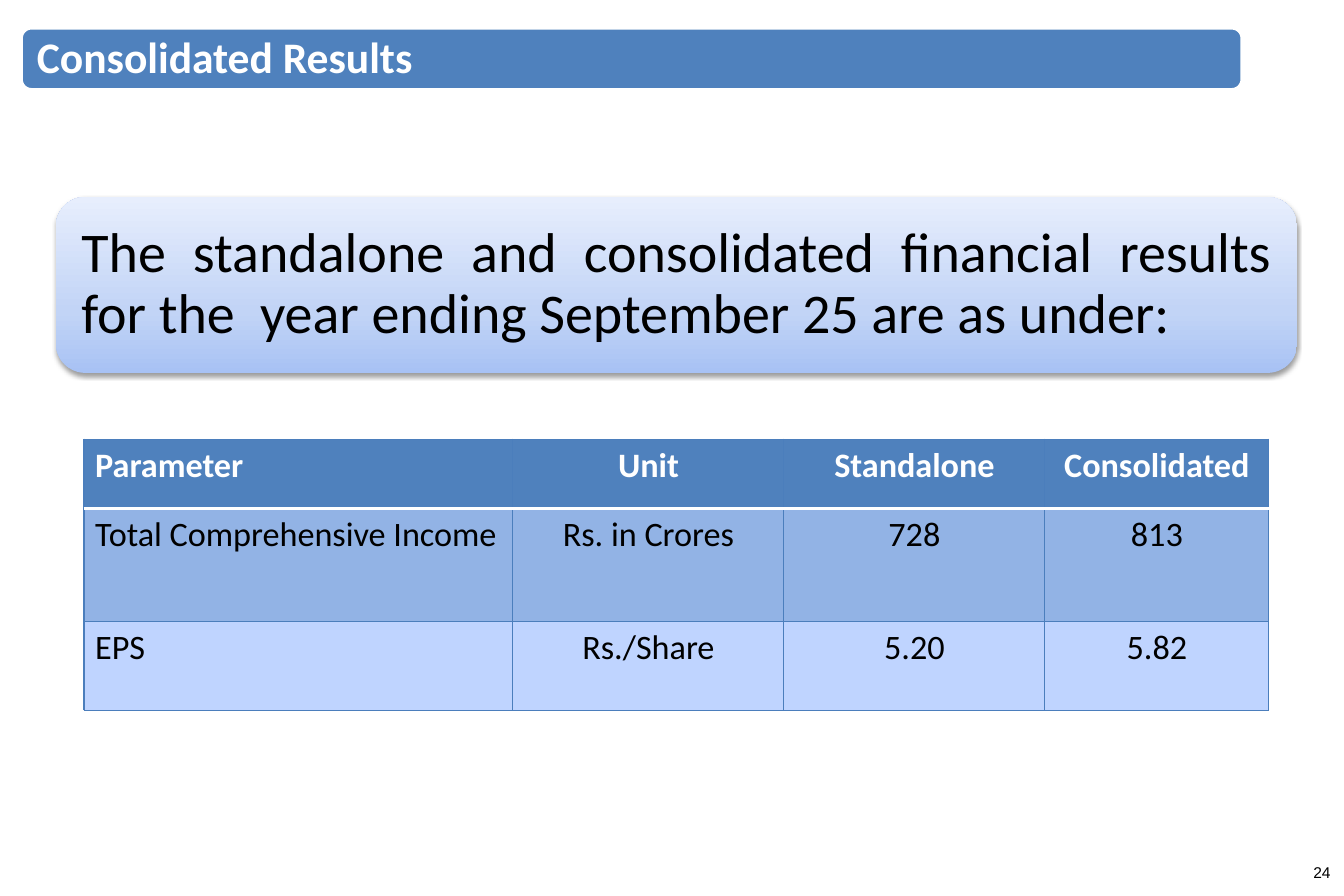
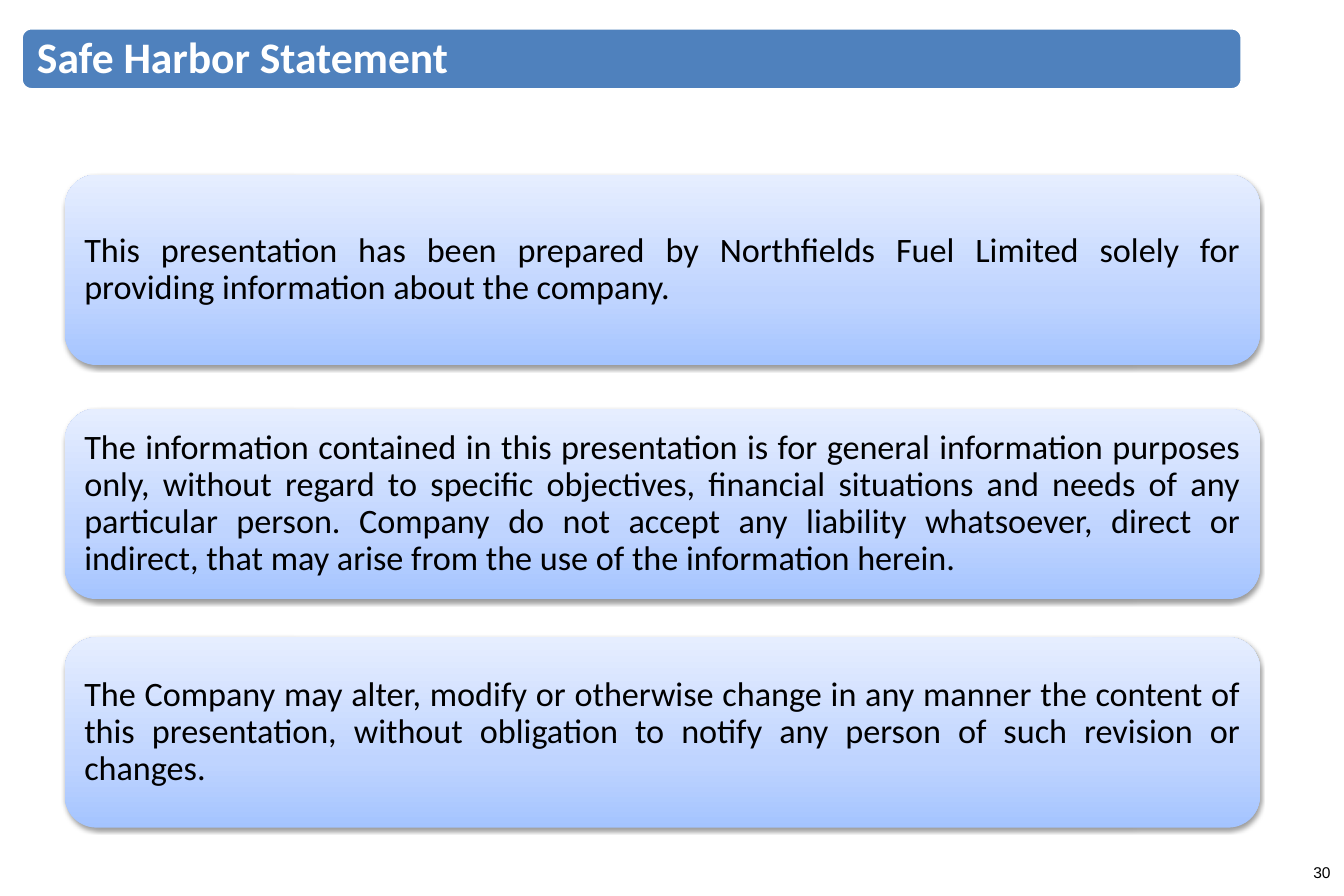
from lxml.etree import SubElement
from pptx import Presentation
from pptx.dml.color import RGBColor
from pptx.enum.shapes import MSO_SHAPE
from pptx.enum.text import MSO_ANCHOR, MSO_AUTO_SIZE, PP_ALIGN
from pptx.oxml.ns import qn
from pptx.util import Inches, Pt

BLUE = RGBColor(0x4F, 0x81, 0xBD)
EDGE = RGBColor(0x4B, 0x7E, 0xBC)
DARK = RGBColor(0x92, 0xB3, 0xE5)
PALE = RGBColor(0xBF, 0xD4, 0xFF)
WHITE = RGBColor(0xFF, 0xFF, 0xFF)
BLACK = RGBColor(0x00, 0x00, 0x00)
SOFT = [(0, RGBColor(0xA8, 0xC2, 0xF4)), (35, RGBColor(0xC2, 0xD4, 0xF6)),
        (100, RGBColor(0xE7, 0xEE, 0xFD))]
VIVID = [(0, RGBColor(0xA4, 0xC4, 0xFF)), (35, PALE),
         (100, RGBColor(0xE6, 0xEE, 0xFF))]


def write(frame, text, size=22, color=BLACK, bold=False, font="Calibri",
          align=PP_ALIGN.LEFT, space=None):
    """Put one formatted paragraph into a text frame."""
    frame.word_wrap = True
    par = frame.paragraphs[0]
    par.text = text
    par.alignment = align
    par.line_spacing = space
    face = par.font
    face.name, face.size, face.bold = font, Pt(size), bold
    face.color.rgb = color


def inset(frame, side, ends):
    """Set the margins of a text frame and centre it vertically."""
    frame.margin_left = frame.margin_right = Inches(side)
    frame.margin_top = frame.margin_bottom = Inches(ends)
    frame.vertical_anchor = MSO_ANCHOR.MIDDLE


def tint(node, color, alpha=None):
    """Add an RGB colour, perhaps translucent, to an XML node."""
    rgb = SubElement(node, qn("a:srgbClr"), val=str(color))
    if alpha is not None:
        SubElement(rgb, qn("a:alpha"), val=str(alpha * 1000))


def border(cell, sides):
    """Draw cell borders from (side, colour, points) rows."""
    props = cell._tc.get_or_add_tcPr()
    for spot, (side, color, width) in enumerate(sides):
        line = SubElement(props, qn("a:ln" + side), w=str(Pt(width)))
        tint(SubElement(line, qn("a:solidFill")), color)
        props.insert(spot, line)


class Deck:
    """Hold the shared style and the current slide."""

    def __init__(self):
        """Start an empty deck."""
        self.prs = Presentation()
        self.prs.slide_width, self.prs.slide_height = Inches(12), Inches(8)

    def round(self, left, top, width, height):
        """Add a rounded rectangle without a shadow."""
        shape = self.slide.shapes.add_shape(
            MSO_SHAPE.ROUNDED_RECTANGLE, Inches(left), Inches(top),
            Inches(width), Inches(height))
        shape.shadow.inherit = False
        return shape

    def page(self, title, number):
        """Add a slide with its title band and page number."""
        self.slide = self.prs.slides.add_slide(self.prs.slide_layouts[5])
        band = self.round(0.19, 0.25, 10.9, 0.55)
        band.fill.solid()
        band.fill.fore_color.rgb = BLUE
        band.line.color.rgb = WHITE
        band.line.width = Pt(2)
        head = self.slide.shapes.title
        head._element.addprevious(band._element)
        head.left, head.top = Inches(0.21), Inches(0.28)
        head.width, head.height = Inches(10.84), Inches(0.5)
        head.text_frame.auto_size = MSO_AUTO_SIZE.NONE
        inset(head.text_frame, 0.12, 0.12)
        write(head.text_frame, title, size=28, color=WHITE, bold=True, space=0.9)
        foot = self.slide.shapes.add_textbox(
            Inches(9.2), Inches(7.57), Inches(2.8), Inches(0.43))
        inset(foot.text_frame, 0.12, 0.06)
        write(foot.text_frame, number, size=10, font="Arial",
              align=PP_ALIGN.RIGHT)

    def panel(self, text, left, top, width, height, stops, pad, size=22):
        """Add a shaded panel of justified text."""
        shape = self.round(left, top, width, height)
        shape.fill.gradient()
        shape.fill.gradient_angle = 90
        shape.line.fill.background()
        props = shape._element.spPr
        ramp = props.find(".//" + qn("a:gsLst"))
        for stop in list(ramp):
            ramp.remove(stop)
        for spot, color in stops:
            tint(SubElement(ramp, qn("a:gs"), pos=str(spot * 1000)), color)
        shade = SubElement(
            props.find(qn("a:effectLst")), qn("a:outerShdw"),
            blurRad=str(Pt(3.1)), dist=str(Pt(1.6)), dir="5400000",
            rotWithShape="0")
        tint(shade, BLACK, 38)
        inset(shape.text_frame, pad, pad)
        write(shape.text_frame, text, size=size, align=PP_ALIGN.JUSTIFY,
              space=0.9)

    def table(self, rows, left, top, widths, heights):
        """Add a ruled table with a header row."""
        grid = self.slide.shapes.add_table(
            len(rows), len(widths), Inches(left), Inches(top),
            Inches(sum(widths)), Inches(sum(heights))).table
        for col, width in zip(grid.columns, widths):
            col.width = Inches(width)
        for row, height in zip(grid.rows, heights):
            row.height = Inches(height)
        thin, thick = (EDGE, 0.75), (WHITE, 2)
        for r, (row, fill) in enumerate(zip(rows, (BLUE, DARK, PALE))):
            for c, text in enumerate(row):
                cell = grid.cell(r, c)
                cell.fill.solid()
                cell.fill.fore_color.rgb = fill
                border(cell, [("L", *thin), ("R", *thin),
                              ("T", *(thick if r == 1 else thin)),
                              ("B", *(thick if r == 0 else thin))])
                write(cell.text_frame, text, bold=r == 0,
                      color=BLACK if r else WHITE,
                      align=PP_ALIGN.CENTER if c else PP_ALIGN.LEFT)


def main():
    """Build both slides and save them."""
    deck = Deck()
    deck.page("Consolidated Results", "24")
    deck.panel("The standalone and consolidated financial results for the  "
               "year ending September 25 are as under:",
               0.5, 1.76, 11.08, 1.57, SOFT, 0.15, size=36)
    deck.table([("Parameter", "Unit", "Standalone", "Consolidated"),
                ("Total Comprehensive Income", "Rs. in Crores", "728", "813"),
                ("EPS", "Rs./Share", "5.20", "5.82")],
               0.75, 3.92, (3.83, 2.42, 2.33, 2), (0.62, 1.01, 0.79))

    deck.page("Safe Harbor Statement", "30")
    notes = [
        (1.56, "This presentation has been prepared by Northfields Fuel "
         "Limited solely for providing information about the company."),
        (3.65, "The information contained in this presentation is for general "
         "information purposes only, without regard to specific objectives, "
         "financial situations and needs of any particular person. Company do "
         "not accept any liability whatsoever, direct or indirect, that may "
         "arise from the use of the information herein."),
        (5.69, "The Company may alter, modify or otherwise change in any "
         "manner the content of this presentation, without obligation to "
         "notify any person of such revision or changes."),
    ]
    for top, text in notes:
        deck.panel(text, 0.58, top, 10.67, 1.7, VIVID, 0.09)
    deck.prs.save("out.pptx")


if __name__ == "__main__":
    main()
